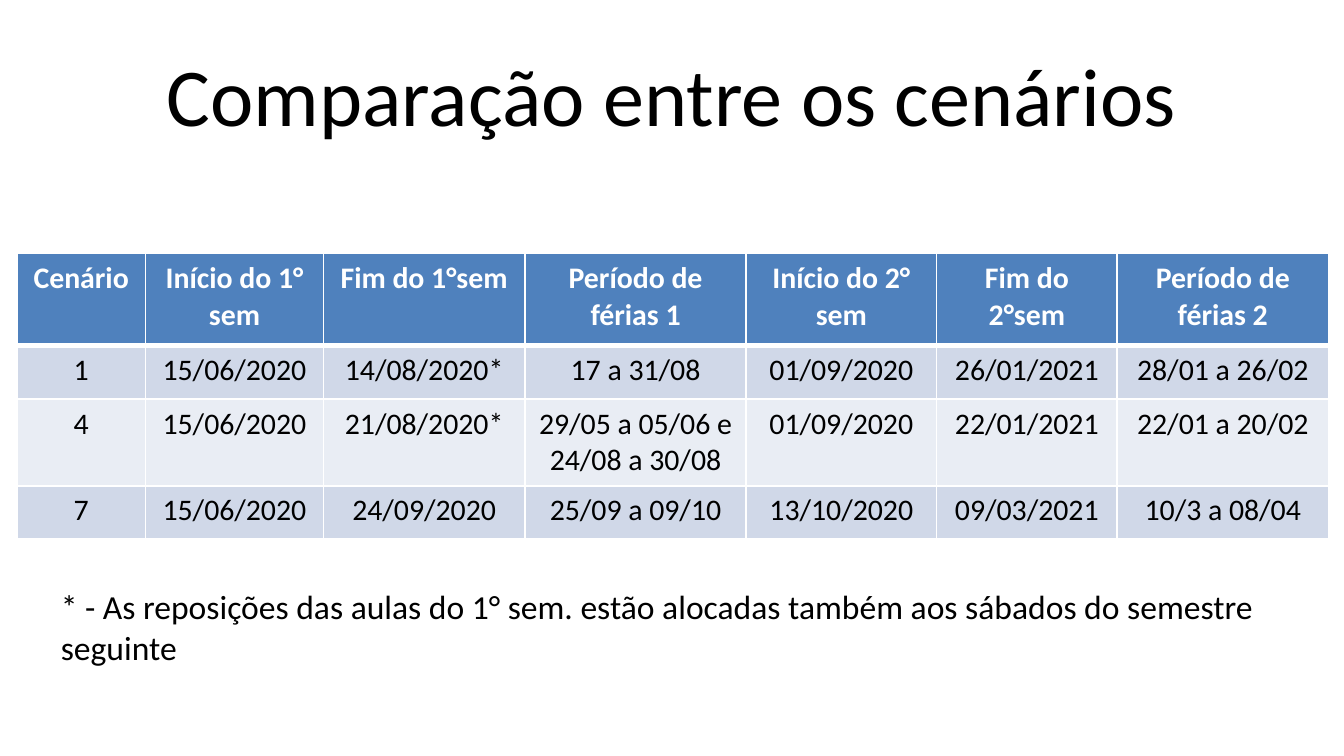
from dataclasses import dataclass

import pptx
import pptx.dml.color
import pptx.enum.text
import pptx.oxml
import pptx.oxml.ns
import pptx.util

PX = 9525  # EMU per px, 96 px to the inch
FONT = "Calibri"
BLACK, WHITE = "000000", "FFFFFF"
HEADER_FILL = "4F81BD"
BAND_FILLS = ("D0D8E8", "E9EDF4")
CENTER = pptx.enum.text.PP_ALIGN.CENTER
LEFT = pptx.enum.text.PP_ALIGN.LEFT
MIDDLE = pptx.enum.text.MSO_ANCHOR.MIDDLE
TOP = pptx.enum.text.MSO_ANCHOR.TOP


@dataclass
class Area:
    left: int
    top: int
    width: int
    height: int

    def emu(self) -> list[int]:
        return [n * PX for n in (self.left, self.top, self.width, self.height)]


@dataclass
class Scenario:
    height: int
    values: tuple[str, ...]


COLUMNS = {
    "Cenário": 92,
    "Início do 1° sem": 127,
    "Fim do 1°sem": 144,
    "Período de férias 1": 158,
    "Início do 2° sem": 136,
    "Fim do 2°sem": 129,
    "Período de férias 2": 151,
}
HEADER_HEIGHT = 66
SCENARIOS = [
    Scenario(38, ("1", "15/06/2020", "14/08/2020*", "17 a 31/08",
                  "01/09/2020", "26/01/2021", "28/01 a 26/02")),
    Scenario(62, ("4", "15/06/2020", "21/08/2020*", "29/05 a 05/06 e\n24/08 a 30/08",
                  "01/09/2020", "22/01/2021", "22/01 a 20/02")),
    Scenario(38, ("7", "15/06/2020", "24/09/2020", "25/09 a 09/10",
                  "13/10/2020", "09/03/2021", "10/3 a 08/04")),
]


def rgb(color: str) -> pptx.dml.color.RGBColor:
    return pptx.dml.color.RGBColor.from_string(color)


def write(frame, text: str, *, size: int, color: str = BLACK,
          bold: bool = False, align=LEFT) -> None:
    """Fill a text frame, one paragraph per line of text."""
    for index, line in enumerate(text.split("\n")):
        para = frame.add_paragraph() if index else frame.paragraphs[0]
        para.alignment = align
        span = para.add_run()
        span.text = line
        span.font.name = FONT
        span.font.size = pptx.util.Pt(size)
        span.font.bold = bold
        span.font.color.rgb = rgb(color)


def add_text(page, area: Area, text: str, *, anchor=TOP, **style) -> None:
    frame = page.shapes.add_textbox(*area.emu()).text_frame
    frame.word_wrap = True
    frame.vertical_anchor = anchor
    write(frame, text, **style)


def add_borders(cell, top: int, bottom: int) -> None:
    """Draw white cell borders; top and bottom widths are in points."""
    properties = cell._tc.get_or_add_tcPr()
    namespace = pptx.oxml.ns.nsdecls("a")
    for side, width in {"L": 1, "R": 1, "T": top, "B": bottom}.items():
        properties.append(pptx.oxml.parse_xml(
            f'<a:ln{side} {namespace} w="{pptx.util.Pt(width)}"><a:solidFill>'
            f'<a:srgbClr val="{WHITE}"/></a:solidFill></a:ln{side}>'))


def add_scenario_table(page, left: int, top: int) -> None:
    rows = [Scenario(HEADER_HEIGHT, tuple(COLUMNS)), *SCENARIOS]
    area = Area(left, top, sum(COLUMNS.values()), sum(row.height for row in rows))
    table = page.shapes.add_table(len(rows), len(COLUMNS), *area.emu()).table
    for column, width in zip(table.columns, COLUMNS.values()):
        column.width = width * PX
    for index, row in enumerate(rows):
        header = index == 0
        table.rows[index].height = row.height * PX
        for position, value in enumerate(row.values):
            cell = table.cell(index, position)
            # Thick rule between the header and the first scenario
            add_borders(cell, top=3 if index == 1 else 1, bottom=3 if header else 1)
            cell.fill.solid()
            cell.fill.fore_color.rgb = rgb(
                HEADER_FILL if header else BAND_FILLS[(index - 1) % 2])
            write(cell.text_frame, value, size=16, bold=header, align=CENTER,
                  color=WHITE if header else BLACK)


def main() -> None:
    deck = pptx.Presentation()
    deck.slide_width, deck.slide_height = 960 * PX, 540 * PX
    page = deck.slides.add_slide(deck.slide_layouts[6])

    # Title
    add_text(page, Area(48, 22, 864, 90), "Comparação entre os cenários",
             anchor=MIDDLE, size=44, align=CENTER)

    # Dates of each scenario
    add_scenario_table(page, left=12, top=181)

    # Footnote
    add_text(page, Area(34, 414, 892, 68),
             "* - As reposições das aulas do 1° sem. estão alocadas também "
             "aos sábados do semestre seguinte", size=18)

    deck.save("out.pptx")


if __name__ == "__main__":
    main()
